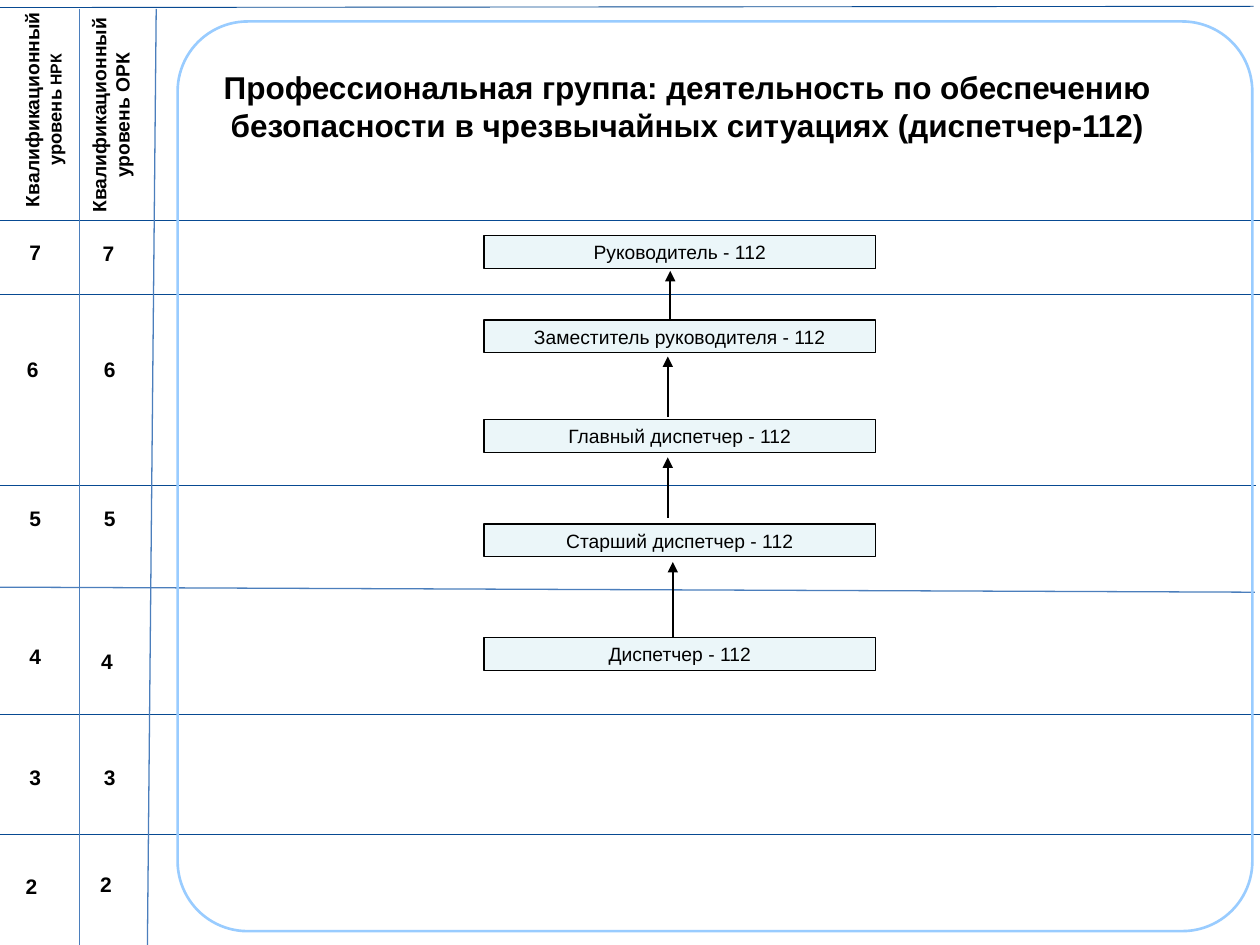
from typing import NamedTuple

from lxml.etree import SubElement
from pptx import Presentation
from pptx.dml.color import RGBColor
from pptx.enum.shapes import MSO_CONNECTOR, MSO_SHAPE
from pptx.enum.text import MSO_ANCHOR, PP_ALIGN
from pptx.oxml.ns import qn
from pptx.util import Inches, Pt

BLACK = RGBColor(0x00, 0x00, 0x00)
NAVY = RGBColor(0x08, 0x4A, 0x92)
BLUE = RGBColor(0x4B, 0x7E, 0xBC)
SKY = RGBColor(0x99, 0xCC, 0xFF)
PALE = RGBColor(0xEB, 0xF6, 0xF9)
FONT = "Arial"
INSET = Inches(0.03)


class Rule(NamedTuple):
    x1: float
    y1: float
    x2: float
    y2: float
    color: RGBColor = NAVY
    width: float = 0.5


class Level(NamedTuple):
    number: str
    national_x: float
    national_y: float
    sector_x: float
    sector_y: float


class Post(NamedTuple):
    title: str
    top: float


class Promotion(NamedTuple):
    x: float
    start: float
    end: float


RULES = [
    Rule(-0.03, 0.06, 9.95, 0.05),
    Rule(0, 1.75, 10, 1.75),
    Rule(0, 2.34, 10, 2.34),
    Rule(-0.03, 3.85, 9.97, 3.85),
    Rule(-0.02, 4.66, 9.96, 4.7, BLUE, 0.75),
    Rule(0, 5.67, 10, 5.67),
    Rule(0, 6.62, 10, 6.62),
    Rule(0.63, 0.07, 0.63, 7.53, BLUE, 0.75),
    Rule(1.24, 0.07, 1.17, 7.52, BLUE, 0.75),
]
LEVELS = [
    Level("7", 0.09, 1.86, 0.67, 1.87),
    Level("6", 0.07, 2.79, 0.68, 2.79),
    Level("5", 0.09, 3.97, 0.68, 3.97),
    Level("4", 0.09, 5.07, 0.66, 5.11),
    Level("3", 0.09, 6.03, 0.68, 6.03),
    Level("2", 0.06, 6.89, 0.65, 6.88),
]
POSTS = [
    Post("Руководитель - 112", 1.87),
    Post("Заместитель руководителя - 112", 2.54),
    Post("Главный диспетчер - 112", 3.33),
    Post("Старший диспетчер - 112", 4.16),
    Post("Диспетчер - 112", 5.06),
]
PROMOTIONS = [
    Promotion(5.32, 2.53, 2.15),
    Promotion(5.3, 3.31, 2.83),
    Promotion(5.3, 4.11, 3.63),
    Promotion(5.34, 5.06, 4.46),
]


def draw_line(slide, rule: Rule):
    line = slide.shapes.add_connector(
        MSO_CONNECTOR.STRAIGHT,
        Inches(rule.x1), Inches(rule.y1), Inches(rule.x2), Inches(rule.y2),
    )
    line.line.color.rgb = rule.color
    line.line.width = Pt(rule.width)
    SubElement(line._element.spPr, qn("a:effectLst"))
    return line


def draw_promotion(slide, step: Promotion) -> None:
    arrow = draw_line(slide, Rule(step.x, step.start, step.x, step.end, BLACK, 1))
    SubElement(arrow.line._get_or_add_ln(), qn("a:tailEnd"), type="triangle")


def draw_box(slide, left: float, top: float, width: float, height: float,
             corner: float = 0):
    box = slide.shapes.add_shape(
        MSO_SHAPE.ROUNDED_RECTANGLE,
        Inches(left), Inches(top), Inches(width), Inches(height),
    )
    box.adjustments[0] = corner
    box.shadow.inherit = False
    box.fill.background()
    box.line.fill.background()
    return box


def style(paragraph, size: float, bold: bool) -> None:
    paragraph.alignment = PP_ALIGN.CENTER
    font = paragraph.font
    font.name, font.size, font.bold = FONT, Pt(size), bold
    font.color.rgb = BLACK


def write(box, text: str, size: float, bold: bool = True):
    frame = box.text_frame
    frame.word_wrap = True
    frame.vertical_anchor = MSO_ANCHOR.MIDDLE
    frame.margin_left = frame.margin_right = INSET
    frame.margin_top = frame.margin_bottom = INSET
    paragraph = frame.paragraphs[0]
    paragraph.text = text
    style(paragraph, size, bold)
    return paragraph


def draw_header(slide, left: float, top: float, width: float, height: float,
                text: str):
    header = draw_box(slide, left, top, width, height)
    paragraph = write(header, text, 11)
    header.text_frame._txBody.bodyPr.set("vert", "vert270")
    return paragraph


def draw_post(slide, post: Post) -> None:
    box = draw_box(slide, 3.84, post.top, 3.11, 0.26)
    box.fill.solid()
    box.fill.fore_color.rgb = PALE
    box.line.color.rgb = BLACK
    box.line.width = Pt(0.75)
    write(box, post.title, 11, False)


def draw_level(slide, level: Level) -> None:
    for left, top in ((level.national_x, level.national_y),
                      (level.sector_x, level.sector_y)):
        write(draw_box(slide, left, top, 0.38, 0.28), level.number, 12)


def main() -> None:
    prs = Presentation()
    prs.slide_width, prs.slide_height = Inches(10), Inches(7.5)
    slide = prs.slides.add_slide(prs.slide_layouts[6])

    for rule in RULES:
        draw_line(slide, rule)

    group_frame = draw_box(slide, 1.41, 0.17, 8.53, 7.22, 0.077)
    group_frame.line.color.rgb = SKY
    group_frame.line.width = Pt(1.5)

    group_title = slide.shapes.add_textbox(
        Inches(1.64), Inches(0.49), Inches(7.63), Inches(0.71))
    group_title.text_frame.word_wrap = True
    heading = group_title.text_frame.paragraphs[0]
    heading.text = ("Профессиональная группа: деятельность по обеспечению "
                    "безопасности в чрезвычайных ситуациях (диспетчер-112)")
    style(heading, 18, True)

    national = draw_header(slide, 0.12, -0.01, 0.44, 1.76, "Квалификационный")
    for text, size in ((" ", 9), ("уровень", 10.5), (" НРК", 9)):
        run = national.add_run()
        run.text = text
        run.font.size = Pt(size)
    draw_header(slide, 0.65, 0.1, 0.45, 1.63, "Квалификационный уровень ОРК")

    for level in LEVELS:
        draw_level(slide, level)
    for post in POSTS:
        draw_post(slide, post)
    for step in PROMOTIONS:
        draw_promotion(slide, step)

    prs.save("out.pptx")


if __name__ == "__main__":
    main()
